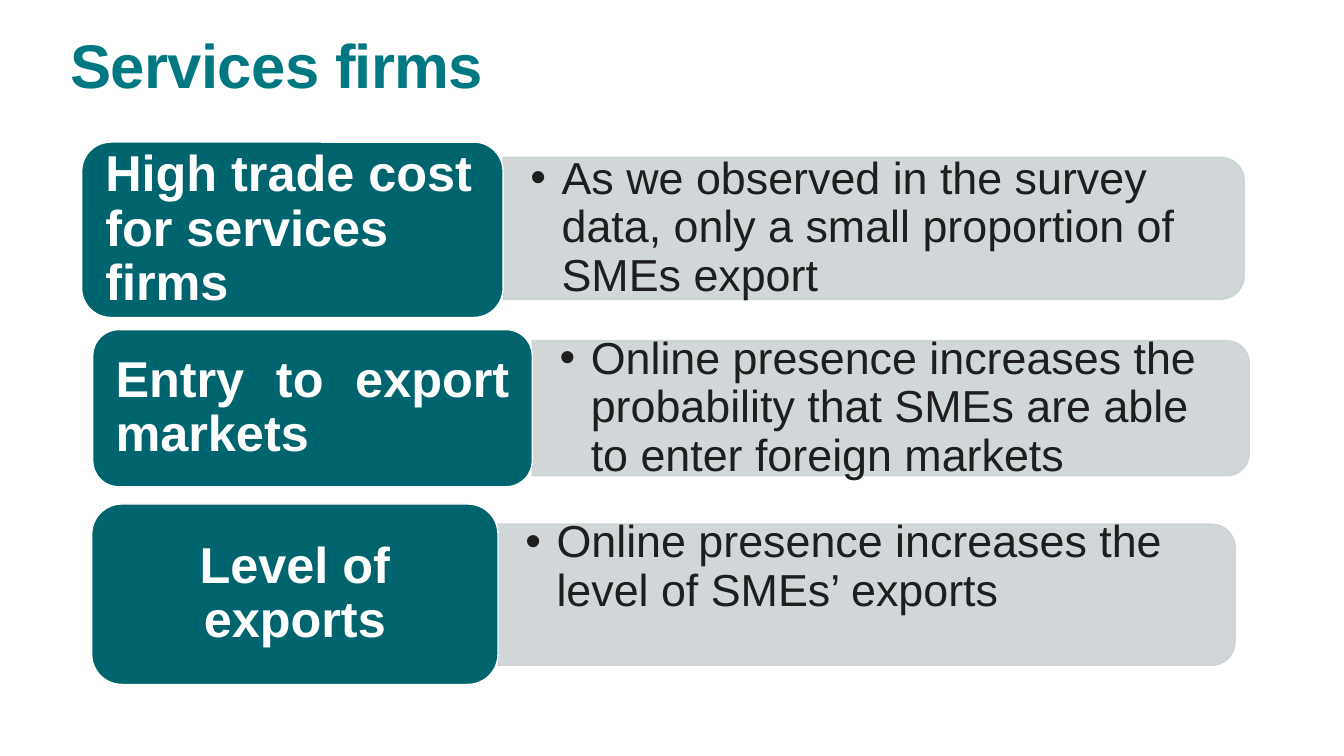
from lxml import etree
from pptx import Presentation
from pptx import util as u
from pptx.dml import color
from pptx.enum import shapes, text
from pptx.oxml import ns

PX = 9144
TEAL, PALE, WHITE, INK, HEADING = "00646E", "CCD3D5", "FFFFFF", "1E1E1E", "007882"
ALIGN = text.PP_ALIGN

ROWS = [
    ("High trade cost for services firms", ALIGN.LEFT, (81, 141, 418, 174),
     "As we observed in the survey data, only a small proportion of SMEs export",
     (499, 156, 735, 141), 0),
    ("Entry to export markets", ALIGN.JUSTIFY, (92, 327, 436, 156),
     "Online presence increases the probability that SMEs are able to enter foreign markets",
     (528, 338, 711, 134), 0),
    ("Level of exports", ALIGN.CENTER, (91, 500, 403, 179),
     "Online presence increases the level of SMEs’ exports",
     (494, 520, 731, 140), 27),
]


def px(*lengths):
    return [u.Emu(round(length * PX)) for length in lengths]


def rgb(value):
    return color.RGBColor.from_string(value)


def style_text(shape, wording, size, ink, margins, bold=False, align=ALIGN.LEFT,
               anchor=text.MSO_ANCHOR.MIDDLE):
    frame = shape.text_frame
    frame.text = wording
    frame.word_wrap = True
    frame.auto_size = text.MSO_AUTO_SIZE.NONE
    frame.vertical_anchor = anchor
    (frame.margin_left, frame.margin_top,
     frame.margin_right, frame.margin_bottom) = px(*margins)
    para = frame.paragraphs[0]
    para.alignment = align
    para.line_spacing = 0.9
    para.space_before = u.Pt(0)
    span = para.runs[0]
    span.font.name = "Arial"
    span.font.size = u.Pt(size)
    span.font.bold = bold
    span.font.color.rgb = rgb(ink)
    return para


def add_block(page, kind, place, fill, line):
    block = page.shapes.add_shape(kind, *px(*place))
    block.shadow.inherit = False
    block.fill.solid()
    block.fill.fore_color.rgb = rgb(fill)
    block.line.color.rgb = rgb(line)
    block.line.width = u.Pt(1)
    return block


def add_panel(page, place):
    left, top, width, height = place
    turn = (width - height) / 2
    panel = add_block(page, shapes.MSO_SHAPE.ROUND_2_SAME_RECTANGLE,
                      (left + turn, top - turn, height, width), PALE, PALE)
    panel.rotation = 90
    for tint in panel._element.spPr.iter(ns.qn("a:srgbClr")):
        etree.SubElement(tint, ns.qn("a:alpha"), val="90000")


def add_bullet_text(page, wording, place, lift):
    left, top, width, height = place
    box = page.shapes.add_textbox(*px(left, top + 7 - lift, width - 7, height - 14))
    para = style_text(box, wording, 32, INK, (27, 14, 27, 14))
    props = para._p.get_or_add_pPr()
    indent = px(31)[0]
    props.set("marL", str(indent))
    props.set("indent", str(-indent))
    etree.SubElement(props, ns.qn("a:buFont"), typeface="Arial")
    etree.SubElement(props, ns.qn("a:buChar"), char="•")


def add_label(page, wording, align, place):
    label = add_block(page, shapes.MSO_SHAPE.ROUNDED_RECTANGLE, place, TEAL, WHITE)
    style_text(label, wording, 36, WHITE, (15, 7, 15, 7), True, align)


def set_title(page, wording):
    title = page.shapes.title
    title.left, title.top, title.width, title.height = px(70, 30, 1195, 108)
    para = style_text(title, wording, 44, HEADING, (0, 5, 10, 5), True,
                      anchor=text.MSO_ANCHOR.TOP)
    para.runs[0]._r.get_or_add_rPr().set("spc", "-50")


def main():
    deck = Presentation()
    deck.slide_width, deck.slide_height = px(1333, 750)
    page = deck.slides.add_slide(deck.slide_layouts[5])
    set_title(page, "Services firms")
    for heading, align, label_place, finding, panel_place, lift in ROWS:
        add_panel(page, panel_place)
        add_bullet_text(page, finding, panel_place, lift)
        add_label(page, heading, align, label_place)
    deck.save("out.pptx")


if __name__ == "__main__":
    main()
